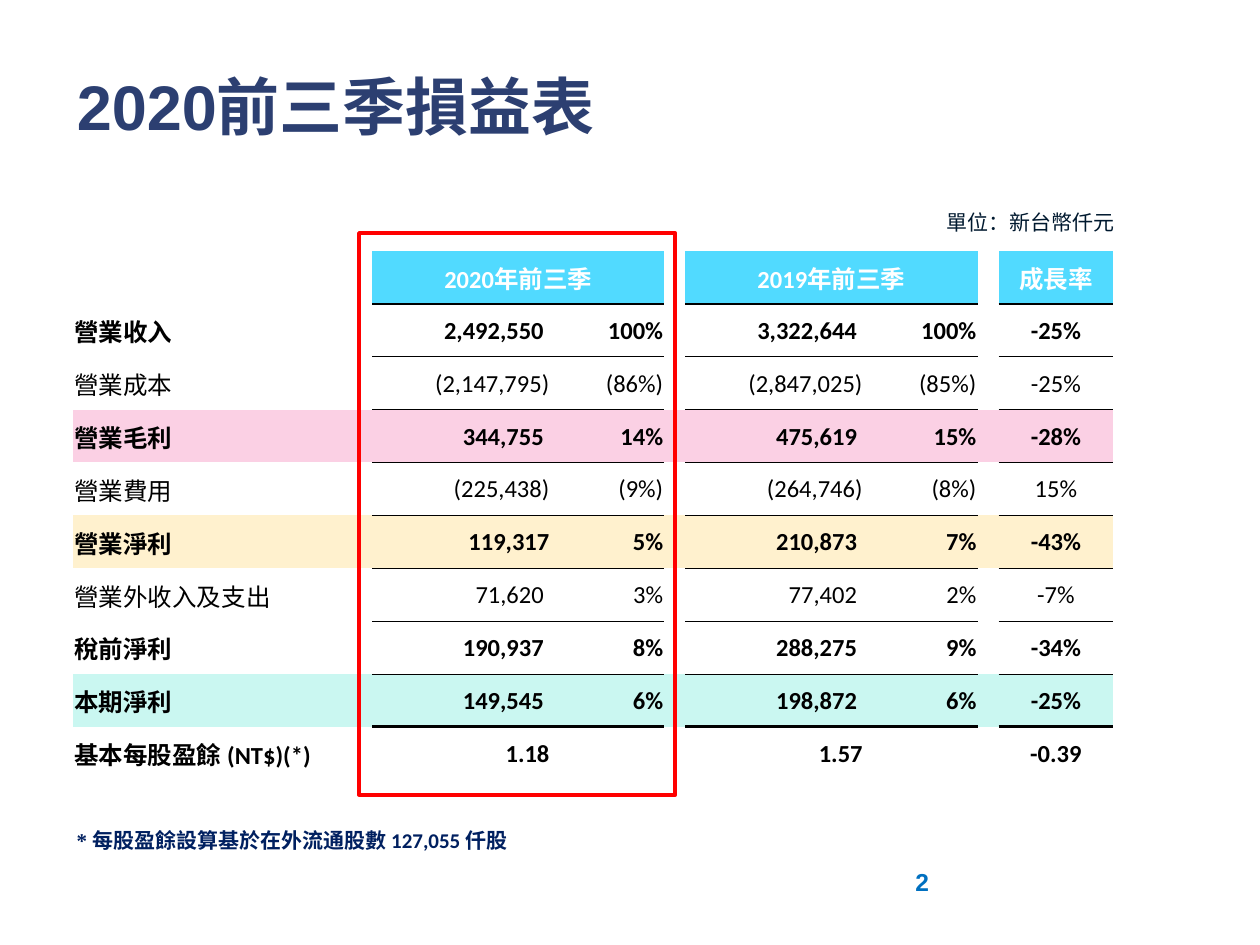
from lxml import etree
from pptx import Presentation
from pptx.dml.color import RGBColor
from pptx.enum.shapes import MSO_SHAPE
from pptx.enum.text import MSO_ANCHOR, PP_ALIGN
from pptx.oxml.ns import qn
from pptx.util import Pt

LEFT, MID, RIGHT = PP_ALIGN.LEFT, PP_ALIGN.CENTER, PP_ALIGN.RIGHT
CENTER = MSO_ANCHOR.MIDDLE
RECT = MSO_SHAPE.RECTANGLE

NAVY = RGBColor(0x2C, 0x3F, 0x71)
INK = RGBColor(0x00, 0x19, 0x2F)
NOTE = RGBColor(0x00, 0x20, 0x60)
BLUE = RGBColor(0x00, 0x70, 0xC0)
SKY = RGBColor(0x51, 0xDA, 0xFF)
PINK = RGBColor(0xFB, 0xD0, 0xE4)
CREAM = RGBColor(0xFF, 0xF1, 0xCE)
MINT = RGBColor(0xCA, 0xF7, 0xF1)
RED = RGBColor(0xFF, 0x00, 0x00)
WHITE = RGBColor(0xFF, 0xFF, 0xFF)
BLACK = RGBColor(0x00, 0x00, 0x00)

TITLE = "2020前三季損益表"
UNIT = "單位：新台幣仟元"
PAGE = "2"
FOOT = [("* 每股盈餘設算基於在外流通股數 ", "Times New Roman"),
        ("127,055 ", "Calibri"), ("仟股", "Times New Roman")]

HEADS = ["", "2020年前三季", "", "", "2019年前三季", "", "", "成長率"]
ROWS = [
    ("營業收入", "2,492,550 ", "100%", "3,322,644 ", "100%", "-25%"),
    ("營業成本", "(2,147,795)", "(86%)", "(2,847,025)", "(85%)", "-25%"),
    ("營業毛利", "344,755 ", "14%", "475,619 ", "15%", "-28%"),
    ("營業費用", "(225,438)", "(9%)", "(264,746)", "(8%)", "15%"),
    ("營業淨利", "119,317", "5%", "210,873 ", "7%", "-43%"),
    ("營業外收入及支出", "71,620 ", "3%", "77,402 ", "2%", "-7%"),
    ("稅前淨利", "190,937 ", "8%", "288,275 ", "9%", "-34%"),
    ("本期淨利", "149,545 ", "6%", "198,872 ", "6%", "-25%"),
    ("基本每股盈餘 (NT$)(*)", "1.18", "", "1.57", "", "-0.39"),
]
PLAIN = {2, 4, 6}
BANDS = {3: PINK, 5: CREAM, 8: MINT}
RULES = {0: 1, 2: 0.5, 4: 0.5, 6: 0.5, 7: 0.5, 8: 2}
GAPS = {0, 3, 6}
COLS = [171, 102, 65, 12, 102, 65, 12, 65.5]
ROW = 30.24
NO_STYLE = "{2D5ABB26-0587-4C30-8999-92F81FD0307C}"


def put(frame, text, size=14, font="Calibri", color=BLACK, bold=True, align=LEFT):
    para = frame.paragraphs[0]
    para.alignment = align
    runs = [(text, font)] if isinstance(text, str) else text
    for words, face in runs:
        run = para.add_run()
        run.text = words
        run.font.size = Pt(size)
        run.font.name = face
        run.font.bold = bold
        run.font.color.rgb = color


def add_box(slide, spot, text, **form):
    frame = slide.shapes.add_textbox(*map(Pt, spot)).text_frame
    frame.word_wrap = True
    put(frame, text, **form)


def rule(cell, side, width):
    line = etree.Element(qn("a:" + side), w=str(Pt(width)))
    fill = etree.SubElement(line, qn("a:solidFill"))
    etree.SubElement(fill, qn("a:srgbClr"), val=str(BLACK))
    cell._tc.get_or_add_tcPr().insert(0, line)


def style(cell, row, col):
    cell.margin_left = cell.margin_right = cell.margin_top = Pt(0.72)
    cell.margin_bottom = 0
    cell.vertical_anchor = CENTER
    fill = BANDS.get(row) if row else (SKY if col not in GAPS else None)
    if fill:
        cell.fill.solid()
        cell.fill.fore_color.rgb = fill
    else:
        cell.fill.background()
    if col not in GAPS:
        for side, key in (("lnB", row), ("lnT", row - 1)):
            if key in RULES:
                rule(cell, side, RULES[key])


def add_grid(slide):
    frame = slide.shapes.add_table(len(ROWS) + 1, len(COLS), Pt(41.7), Pt(143.4),
                                   Pt(sum(COLS)), Pt(ROW * (len(ROWS) + 1)))
    grid = frame.table
    grid.first_row = grid.horz_banding = False
    grid._tbl.tblPr.find(qn("a:tableStyleId")).text = NO_STYLE
    for col, width in zip(grid.columns, COLS):
        col.width = Pt(width)
    body = [(name, a, b, "", c, d, "", rate) for name, a, b, c, d, rate in ROWS]
    for r, line in enumerate([HEADS] + body):
        grid.rows[r].height = Pt(ROW)
        for c, text in enumerate(line):
            cell = grid.cell(r, c)
            style(cell, r, c)
            align = MID if r == 0 or c == 7 else RIGHT if c else LEFT
            if text:
                put(cell.text_frame, text, align=align, bold=r not in PLAIN,
                    color=BLACK if r else WHITE)
    for c in (1, 4):
        grid.cell(0, c).merge(grid.cell(0, c + 1))


def main():
    """Build the income statement slide."""
    deck = Presentation()
    deck.slide_width, deck.slide_height = Pt(720), Pt(540)
    slide = deck.slides.add_slide(deck.slide_layouts[5])
    title = slide.shapes.title
    title.left, title.top, title.width, title.height = map(Pt, (36.7, 15, 618, 90))
    title.text_frame.vertical_anchor = CENTER
    put(title.text_frame, TITLE, size=36, font="Arial", color=NAVY)
    add_box(slide, (516, 491.8, 168, 37.4), PAGE, font="Arial", color=BLUE)
    add_box(slide, (479, 116, 165, 21.8), UNIT, size=12, font="Arial",
            color=INK, bold=False, align=RIGHT)
    add_box(slide, (36.7, 469.4, 340, 21.8), FOOT, size=12, color=NOTE)
    add_grid(slide)
    mark = slide.shapes.add_shape(RECT, Pt(205.2), Pt(133.2), Pt(180.7), Pt(321))
    mark.shadow.inherit = False
    mark.fill.background()
    mark.line.color.rgb = RED
    mark.line.width = Pt(2.25)
    deck.save("out.pptx")


if __name__ == "__main__":
    main()
